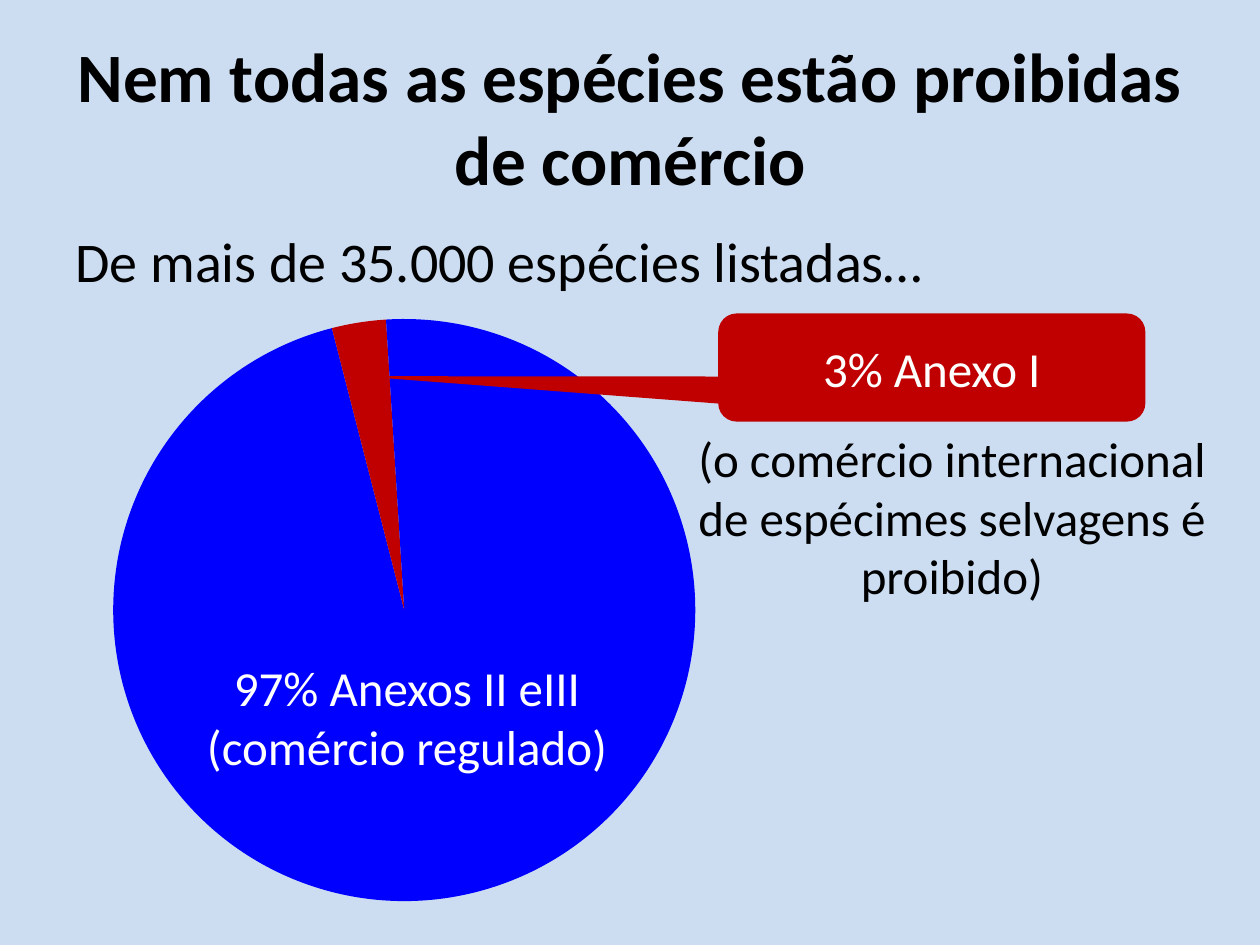
from lxml import etree
from pptx import Presentation
from pptx.chart.data import CategoryChartData
from pptx.dml.color import RGBColor
from pptx.enum import chart as ch, shapes, text
from pptx.oxml import ns
from pptx.util import Cm, Pt

FONT = "Calibri"
COLORS = {
    "background": "CCDDF2",
    "regulated": "0000FF",
    "prohibited": "C00000",
    "dark": "000000",
    "light": "FFFFFF",
}


def rgb(name):
    return RGBColor.from_string(COLORS[name])


def place(sp, left, top, width, height):
    sp.left, sp.top, sp.width, sp.height = map(Cm, (left, top, width, height))


def write(sp, content, size, color="dark", align="CENTER", anchor="MIDDLE", bold=False):
    tf = sp.text_frame
    tf.text = content
    tf.word_wrap = True
    tf.auto_size = text.MSO_AUTO_SIZE.NONE
    tf.vertical_anchor = getattr(text.MSO_ANCHOR, anchor)
    p = tf.paragraphs[0]
    p.alignment = getattr(text.PP_ALIGN, align)
    for r in p.runs:
        r.font.name, r.font.size, r.font.bold = FONT, Pt(size), bold
        r.font.color.rgb = rgb(color)


def add_text(s, box, content, size, align):
    sp = s.shapes.add_textbox(*map(Cm, box))
    write(sp, content, size, align=align, anchor="TOP")


def add_label(s, kind, box, content, fill):
    sp = s.shapes.add_shape(kind, *map(Cm, box))
    sp.shadow.inherit = False
    sp.fill.solid()
    sp.fill.fore_color.rgb = rgb(fill)
    sp.line.fill.background()
    write(sp, content, 28, "light")
    return sp


def set_plot_layout(chart, **fractions):
    """Fix the inner plot area as fractions of the chart frame."""
    area = chart.plots[0]._element.getparent()
    for old in area.findall(ns.qn("c:layout")):
        area.remove(old)
    layout = etree.Element(ns.qn("c:layout"))
    manual = etree.SubElement(layout, ns.qn("c:manualLayout"))
    settings = {"layoutTarget": "inner", "xMode": "edge", "yMode": "edge", **fractions}
    for tag, value in settings.items():
        etree.SubElement(manual, ns.qn(f"c:{tag}")).set("val", str(value))
    area.insert(0, layout)


def add_pie(s, box, values, fills):
    data = CategoryChartData()
    data.categories = [str(i + 1) for i in range(len(values))]
    data.add_series("Series 1", values)
    chart = s.shapes.add_chart(ch.XL_CHART_TYPE.PIE, *map(Cm, box), data).chart
    chart.has_legend = chart.has_title = False
    chart.font.name, chart.font.size = FONT, Pt(10)
    chart.font.color.rgb = rgb("dark")
    plot = chart.plots[0]
    plot.vary_by_categories = False
    for i, name in enumerate(fills):
        point = plot.series[0].points[i].format
        point.fill.solid()
        point.fill.fore_color.rgb = rgb(name)
        point.line.fill.background()
    set_plot_layout(chart, x=0.14, y=0.03, w=0.72, h=0.94)


def main():
    prs = Presentation()
    prs.slide_width, prs.slide_height = Cm(25.4), Cm(19.05)
    s = prs.slides.add_slide(prs.slide_layouts[5])
    s.background.fill.solid()
    s.background.fill.fore_color.rgb = rgb("background")

    # Share of species by appendix
    add_pie(s, (0, 6.05, 16.3, 12.5), (96, 3, 1),
            ("regulated", "prohibited", "regulated"))

    # Title and lead-in
    title = s.shapes.title
    place(title, 1.27, 0.76, 22.86, 3.18)
    write(title, "Nem todas as espécies estão proibidas de comércio", 39.6, bold=True)
    add_text(s, (1.27, 4.45, 23.04, 1.88),
             "De mais de 35.000 espécies listadas…", 32, "LEFT")

    # Regulated trade
    add_label(s, shapes.MSO_SHAPE.ROUNDED_RECTANGLE, (3.71, 12.95, 8.99, 2.97),
              "97% Anexos II eIII (comércio regulado)", "regulated")

    # Prohibited trade
    add_text(s, (13.69, 8.51, 11, 3.84),
             "(o comércio internacional de espécimes selvagens é proibido)", 28, "CENTER")
    callout = add_label(s, shapes.MSO_SHAPE.ROUNDED_RECTANGULAR_CALLOUT,
                        (14.48, 6.32, 8.61, 2.18), "3% Anexo I", "prohibited")
    for i, value in enumerate((-1.34, 0.08, 0.17)):
        callout.adjustments[i] = value

    prs.save("out.pptx")


if __name__ == "__main__":
    main()
